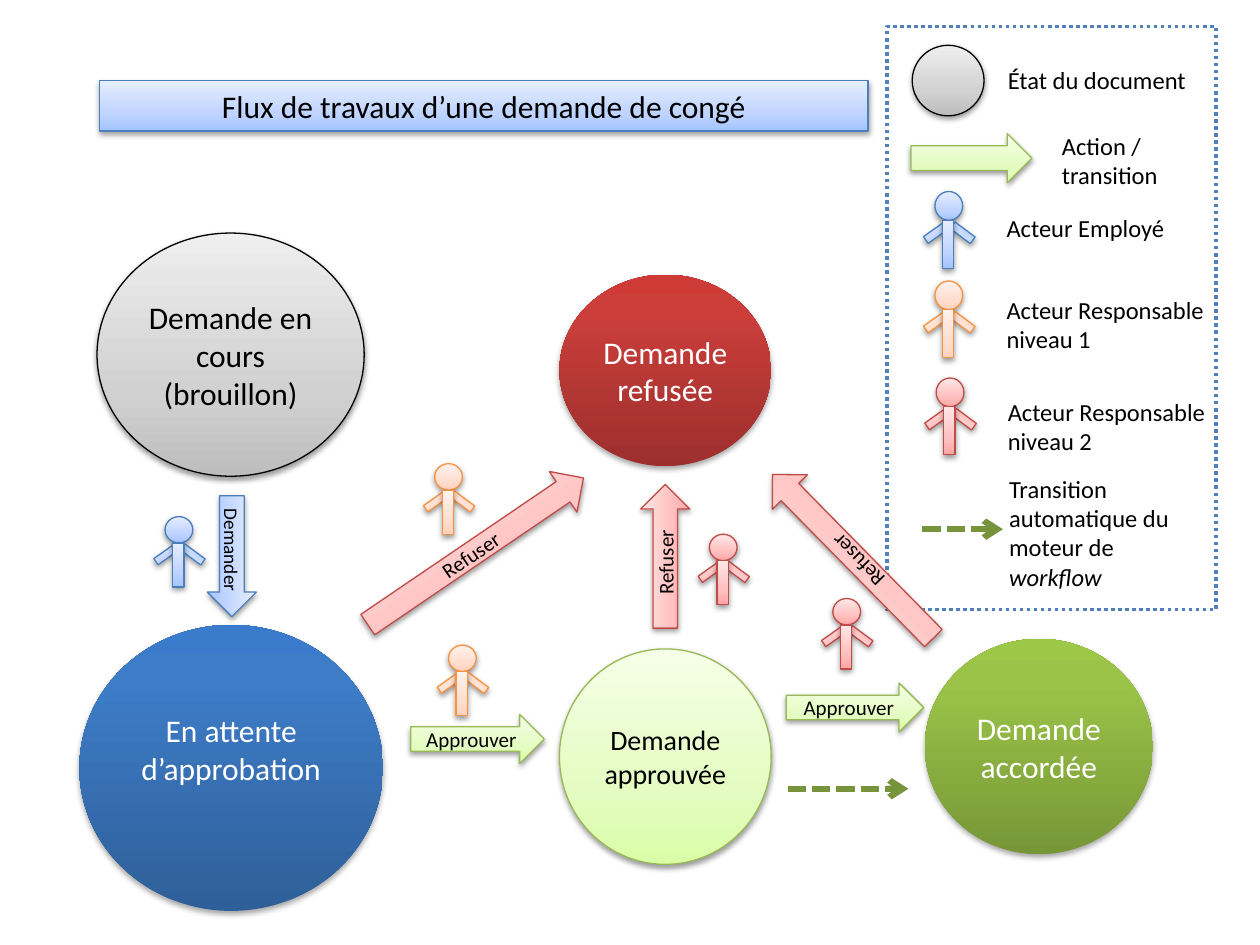
from copy import deepcopy

from lxml import etree
from pptx import Presentation
from pptx.dml.color import RGBColor
from pptx.enum.dml import MSO_LINE
from pptx.enum.shapes import MSO_CONNECTOR, MSO_SHAPE
from pptx.enum.text import MSO_ANCHOR, PP_ALIGN
from pptx.oxml.ns import qn
from pptx.util import Inches, Pt

OVAL, RECTANGLE, ARROW = MSO_SHAPE.OVAL, MSO_SHAPE.RECTANGLE, MSO_SHAPE.RIGHT_ARROW
STRAIGHT = MSO_CONNECTOR.STRAIGHT
CENTER, MIDDLE = PP_ALIGN.CENTER, MSO_ANCHOR.MIDDLE
DASH, DOT = MSO_LINE.SQUARE_DOT, MSO_LINE.ROUND_DOT
FONT = "Calibri"
COLORS = {"black": "000000", "white": "FFFFFF", "legend": "4F81BD", "automatic": "77933C"}

# Gradient colours run from bottom to top
LIGHT_STOPS, DARK_STOPS = (0, 0.35, 1), (0, 0.8, 1)
STYLES = {
    "gray": {"fill": ("BDBDBD", "D1D1D1", "EEEEEE"), "line": "000000"},
    "blue": {"fill": ("A4C4FF", "BFD4FF", "E6EEFF"), "line": "4B7EBC"},
    "green": {"fill": ("DAFDA7", "E4FCC2", "F5FFE7"), "line": "98B955"},
    "orange": {"fill": ("FFD2BD", "FFDED0", "FFF2ED"), "line": "F69240"},
    "red": {"fill": ("FFA6A5", "FFC0BF", "FFE7E7"), "line": "BF4C48"},
    "dark blue": {"fill": ("2F5F99", "3D7CC7", "3A7CCB"), "line": None},
    "dark green": {"fill": ("779737", "9BC348", "9DC746"), "line": None},
    "dark red": {"fill": ("9C2F2D", "CB3E3A", "CE3B37"), "line": None},
}

# States: box, style, size, lines, bottom inset
STATES = [
    ((0.77, 1.85, 2.12, 1.93), "gray", 18, ["Demande en cours", "(brouillon)"], 0.05),
    ((0.63, 4.96, 2.41, 2.27), "dark blue", 18, ["En attente d’approbation"], 0.35),
    ((7.34, 5.07, 1.81, 1.71), "dark green", 18, ["Demande accordée"], 0.05),
    ((4.44, 2.18, 1.68, 1.52), "dark red", 18, ["Demande refusée"], 0.05),
    ((4.44, 5.15, 1.68, 1.71), "green", 16, ["Demande approuvée"], 0.05),
]
# Actions: box, rotation, style, size, label, actor style, actor position
ACTIONS = [
    ((1.36, 4.22, 0.96, 0.39), 90, "blue", 11, "Demander", "blue", (1.22, 4.1)),
    ((3.26, 5.67, 1.06, 0.39), 0, "green", 12, "Approuver", "orange", (3.47, 5.12)),
    ((2.74, 4.18, 2.07, 0.39), 325.8, "red", 12, "Refuser", "orange", (3.36, 3.68)),
    ((4.71, 4.22, 1.14, 0.39), 270, "red", 12, "Refuser", "red", (5.54, 4.24)),
    ((6.24, 5.42, 1.09, 0.39), 0, "green", 12, "Approuver", "red", (6.52, 4.75)),
    ((5.86, 4.22, 1.82, 0.39), 225.5, "red", 12, "Refuser", None, None),
]
# Legend parts, relative to the legend box
LEGEND_ACTORS = [("blue", 0.29, 1.31), ("orange", 0.29, 2.02), ("red", 0.3, 2.79)]
LEGEND_LABELS = [
    ((0.86, 0.26, 1.63, 0.34), "État du document"),
    ((1.29, 0.78, 0.97, 0.57), "Action /\vtransition"),
    ((0.85, 1.43, 1.47, 0.37), "Acteur Employé"),
    ((0.85, 2.08, 1.83, 0.63), "Acteur Responsable\vniveau 1"),
    ((0.86, 2.89, 1.83, 0.63), "Acteur Responsable\vniveau 2"),
]


def rgb(name):
    return RGBColor.from_string(COLORS.get(name, name))


def inches(box):
    return [Inches(length) for length in box]


def add_shadow(shape, dark):
    """Soft shadow that falls straight down."""
    properties = shape._element.spPr
    effects = etree.SubElement(properties, qn("a:effectLst"))
    shadow = etree.SubElement(effects, qn("a:outerShdw"), blurRad="40000",
                              dist="23000" if dark else "20000",
                              dir="5400000", rotWithShape="0")
    color = etree.SubElement(shadow, qn("a:srgbClr"), val=COLORS["black"])
    etree.SubElement(color, qn("a:alpha"), val="35000" if dark else "38000")


def apply_style(shape, name):
    style = STYLES[name]
    dark = style["line"] is None
    shape.fill.gradient()
    shape.fill.gradient_angle = 90
    stop_list = shape._element.spPr.find(".//" + qn("a:gsLst"))
    stop_list.append(deepcopy(stop_list[-1]))
    positions = DARK_STOPS if dark else LIGHT_STOPS
    for stop, position, color in zip(shape.fill.gradient_stops, positions, style["fill"]):
        stop.position = position
        stop.color.rgb = rgb(color)
    if dark:
        shape.line.fill.background()
    else:
        shape.line.color.rgb = rgb(style["line"])
        shape.line.width = Pt(0.75)
    add_shadow(shape, dark)


def add_styled(shapes, kind, box, style, rotation=0):
    shape = shapes.add_shape(kind, *inches(box))
    shape.rotation = rotation
    apply_style(shape, style)
    return shape


def write(shape, lines, size, color="black", alignment=CENTER):
    frame = shape.text_frame
    frame.text = "\n".join(lines)
    for paragraph in frame.paragraphs:
        paragraph.alignment = alignment
        paragraph.font.size = Pt(size)
        paragraph.font.name = FONT
        paragraph.font.color.rgb = rgb(color)


def add_actor(slide, style, left, top, height=0.56):
    """Head, two arms and a body in one group."""
    group = slide.shapes.add_group_shape()
    scale = height / 0.56
    parts = [
        (OVAL, (0.09, 0, 0.22, 0.21), 0),
        (RECTANGLE, (0, 0.27, 0.2, 0.06), 324.7),
        (RECTANGLE, (0.21, 0.27, 0.2, 0.06), 216.6),
        (RECTANGLE, (0.15, 0.21, 0.09, 0.35), 0),
    ]
    for kind, (x, y, width, part_height), rotation in parts:
        box = (left + x, top + y * scale, width, part_height * scale)
        add_styled(group.shapes, kind, box, style, rotation)


def add_automatic_arrow(slide, left, top, width):
    connector = slide.shapes.add_connector(STRAIGHT, *inches((left, top, left + width, top)))
    connector.line.color.rgb = rgb("automatic")
    connector.line.width = Pt(3.5)
    connector.line.dash_style = DASH
    etree.SubElement(connector.line._get_or_add_ln(), qn("a:tailEnd"), type="arrow")
    etree.SubElement(connector._element.spPr, qn("a:effectLst"))


def add_title(slide, box):
    title = slide.shapes.title
    title.left, title.top, title.width, title.height = inches(box)
    apply_style(title, "blue")
    write(title, ["Flux de travaux d’une demande de congé"], 18)
    title.text_frame.vertical_anchor = MIDDLE


def add_label(slide, box, text, wrap=False):
    label = slide.shapes.add_textbox(*inches(box))
    label.text_frame.word_wrap = wrap
    write(label, [text], 14, alignment=PP_ALIGN.LEFT)
    return label


def add_legend(slide, left, top, width, height):
    frame = slide.shapes.add_shape(RECTANGLE, *inches((left, top, width, height)))
    frame.shadow.inherit = False
    frame.fill.background()
    frame.line.color.rgb = rgb("legend")
    frame.line.width = Pt(2)
    frame.line.dash_style = DOT

    # Symbols
    add_styled(slide.shapes, OVAL, (left + 0.2, top + 0.15, 0.57, 0.56), "gray")
    add_styled(slide.shapes, ARROW, (left + 0.19, top + 0.85, 0.96, 0.39), "green")
    for style, x, y in LEGEND_ACTORS:
        add_actor(slide, style, left + x, top + y, 0.61)
    add_automatic_arrow(slide, left + 0.28, top + 3.99, 0.64)

    # Labels
    for (x, y, *size), text in LEGEND_LABELS:
        add_label(slide, (left + x, top + y, *size), text)
    automatic = add_label(slide, (left + 0.87, top + 3.5, 1.62, 1.04),
                          "Transition automatique du moteur de ", wrap=True)
    run = automatic.text_frame.paragraphs[0].add_run()
    run.text = "workflow"
    run.font.italic = True


def add_states(slide):
    for box, style, size, lines, bottom in STATES:
        state = add_styled(slide.shapes, OVAL, box, style)
        write(state, lines, size, "white" if style.startswith("dark") else "black")
        state.text_frame.margin_bottom = Inches(bottom)


def add_actions(slide):
    for box, rotation, style, size, label, actor, position in ACTIONS:
        action = add_styled(slide.shapes, ARROW, box, style, rotation)
        write(action, [label], size)
        action.text_frame.margin_left = action.text_frame.margin_right = 0
        if actor:
            add_actor(slide, actor, *position)
    add_automatic_arrow(slide, 6.25, 6.26, 0.96)


def main():
    presentation = Presentation()
    presentation.slide_width, presentation.slide_height = Inches(10), Inches(7.5)
    slide = presentation.slides.add_slide(presentation.slide_layouts[5])
    add_title(slide, (0.79, 0.64, 6.1, 0.4))
    add_legend(slide, 7.04, 0.21, 2.61, 4.63)
    add_states(slide)
    add_actions(slide)
    presentation.save("out.pptx")


if __name__ == "__main__":
    main()
